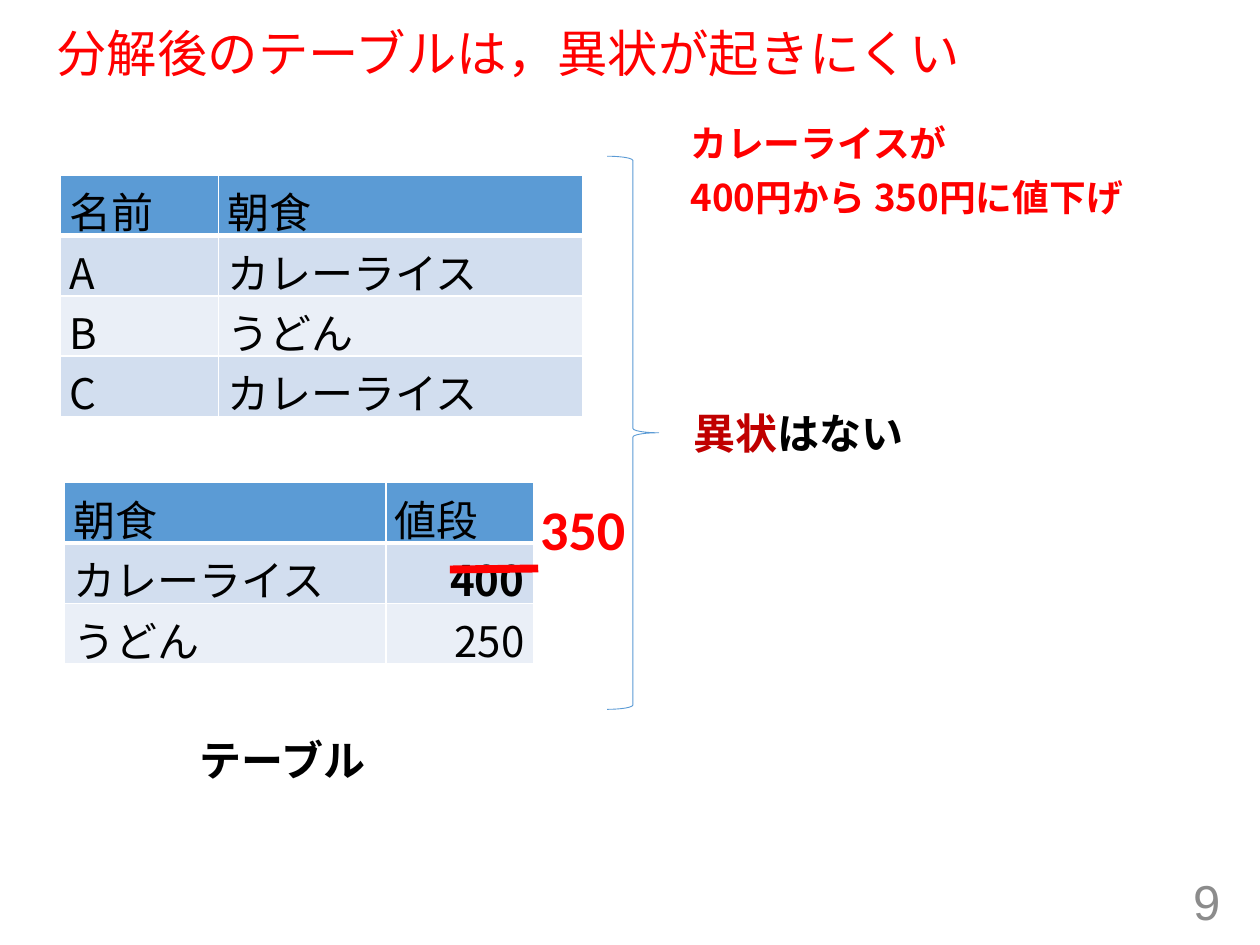
"""Build the slide showing that decomposed tables resist update anomalies."""
from dataclasses import dataclass

from lxml.etree import SubElement
from pptx import Presentation
from pptx.dml.color import RGBColor
from pptx.enum.shapes import MSO_CONNECTOR, MSO_SHAPE
from pptx.enum.text import MSO_ANCHOR, PP_ALIGN
from pptx.oxml.ns import qn
from pptx.util import Cm, Pt


@dataclass(frozen=True)
class Theme:
    sans: str = "Arial"
    latin: str = "Calibri"
    japanese: str = "Noto Sans CJK JP"
    red: str = "FF0000"
    dark_red: str = "C00000"
    black: str = "000000"
    gray: str = "8C8C8C"
    blue: str = "5B9BD5"
    white: str = "FFFFFF"
    bands: tuple = ("D2DEEF", "EAEFF7")
    title: float = 28.8
    number: float = 28
    body: float = 24
    note: float = 21
    price: float = 32


THEME = Theme()
ROW_HEIGHT = 1.21
CELL_INSETS = (0.18, 0.1)
BOX_INSETS = (0.25, 0.13)

TEXTS = [
    dict(at=(0.89, 0.48, 23.5, 1.3), lines=[[("分解後のテーブルは，異状が起きにくい", THEME.red)]],
         size=THEME.title, font=THEME.sans, bold=False, anchor=MSO_ANCHOR.MIDDLE, spacing=0.9),
    dict(at=(19.13, 17.65, 5.72, 1.02), lines=[[("9", THEME.gray)]], size=THEME.number,
         font=THEME.sans, bold=False, anchor=MSO_ANCHOR.MIDDLE, align=PP_ALIGN.RIGHT),
    dict(at=(3.78, 14.68, 3.94, 1.27), lines=[[("テーブル", THEME.black)]],
         size=THEME.body, font=THEME.latin, wrap=False),
    dict(at=(13.74, 8.08, 4.78, 1.27), lines=[[("異状", THEME.dark_red), ("はない", THEME.black)]],
         size=THEME.body, wrap=False),
    dict(at=(13.74, 2.44, 11.66, 5.92),
         lines=[[("カレーライスが", THEME.red)], [("400円から 350円に値下げ", THEME.red)]],
         size=THEME.note, insets=CELL_INSETS, spacing=0.9, gap=8),
    dict(at=(10.64, 9.83, 2.26, 1.63), lines=[[("350", THEME.red)]],
         size=THEME.price, font=THEME.latin, wrap=False),
]
TABLES = [
    dict(at=(1.3, 9.73), columns=(6.48, 2.97), bold=("400",),
         rows=[("朝食", "値段"), ("カレーライス", "400"), ("うどん", "250")]),
    dict(at=(1.22, 3.53), columns=(3.18, 7.34), bold=(),
         rows=[("名前", "朝食"), ("A", "カレーライス"), ("B", "うどん"), ("C", "カレーライス")]),
]
BRACE = (12.24, 3.15, 1.04, 11.15)
STRIKE = (9.07, 11.48, 10.85, 11.46)


def color(value):
    return RGBColor.from_string(value)


def style(span, size, font, value, bold):
    span.font.size = Pt(size)
    span.font.name = font
    span.font.bold = bold
    span.font.color.rgb = color(value)
    SubElement(span.font._element, qn("a:ea")).set("typeface", THEME.japanese)


def add_text(page, at, lines, size, font=THEME.japanese, bold=True, wrap=True,
             anchor=MSO_ANCHOR.TOP, align=PP_ALIGN.LEFT, insets=BOX_INSETS, spacing=None, gap=0):
    frame = page.shapes.add_textbox(*map(Cm, at)).text_frame
    frame.word_wrap = wrap
    frame.vertical_anchor = anchor
    frame.margin_left = frame.margin_right = Cm(insets[0])
    frame.margin_top = frame.margin_bottom = Cm(insets[1])
    frame.text = "\n".join("".join(words for words, _ in line) for line in lines)
    for index, (para, line) in enumerate(zip(frame.paragraphs, lines)):
        para.alignment = align
        para.line_spacing = spacing
        if index:
            para.space_before = Pt(gap)
        para.text = line[0][0]
        for words, _ in line[1:]:
            para.add_run().text = words
        for span, (_, value) in zip(para.runs, line):
            style(span, size, font, value, bold)


def add_border(cell, side, width):
    line = SubElement(cell._tc.get_or_add_tcPr(), qn(f"a:ln{side}"), w=str(Pt(width)))
    fill = SubElement(line, qn("a:solidFill"))
    SubElement(fill, qn("a:srgbClr")).set("val", THEME.white)


def fill_cell(cell, words, is_header, band, bold):
    cell.margin_left = cell.margin_right = Cm(CELL_INSETS[0])
    cell.margin_top = cell.margin_bottom = Cm(CELL_INSETS[1])
    for side in "LRTB":
        add_border(cell, side, 3 if is_header and side == "B" else 1)
    cell.fill.solid()
    cell.fill.fore_color.rgb = color(THEME.blue if is_header else band)
    cell.text_frame.text = words
    para = cell.text_frame.paragraphs[0]
    para.alignment = PP_ALIGN.RIGHT if words.isdigit() else PP_ALIGN.LEFT
    style(para.runs[0], THEME.body, THEME.japanese, THEME.black, bold)


def add_grid(page, at, columns, rows, bold):
    size = (sum(columns), ROW_HEIGHT * len(rows))
    table = page.shapes.add_table(len(rows), len(columns), *map(Cm, at + size)).table
    for column, width in zip(table.columns, columns):
        column.width = Cm(width)
    for r, row in enumerate(rows):
        table.rows[r].height = Cm(ROW_HEIGHT)
        for c, words in enumerate(row):
            fill_cell(table.cell(r, c), words, r == 0, THEME.bands[(r - 1) % 2], words in bold)


def add_brace(page):
    brace = page.shapes.add_shape(MSO_SHAPE.RIGHT_BRACE, *map(Cm, BRACE))
    brace.shadow.inherit = False
    brace.fill.background()
    brace.line.color.rgb = color(THEME.blue)
    brace.line.width = Pt(0.5)


def add_strike(page):
    strike = page.shapes.add_connector(MSO_CONNECTOR.STRAIGHT, *map(Cm, STRIKE))
    strike.line.color.rgb = color(THEME.red)
    strike.line.width = Pt(4.5)
    SubElement(strike._element.spPr, qn("a:effectLst"))


def main():
    deck = Presentation()
    deck.slide_width, deck.slide_height = Cm(25.4), Cm(19.05)
    page = deck.slides.add_slide(deck.slide_layouts[6])
    *labels, new_price = TEXTS
    for label in labels:
        add_text(page, **label)
    add_brace(page)
    for grid in TABLES:
        add_grid(page, **grid)
    add_strike(page)
    add_text(page, **new_price)
    deck.save("out.pptx")


if __name__ == "__main__":
    main()
